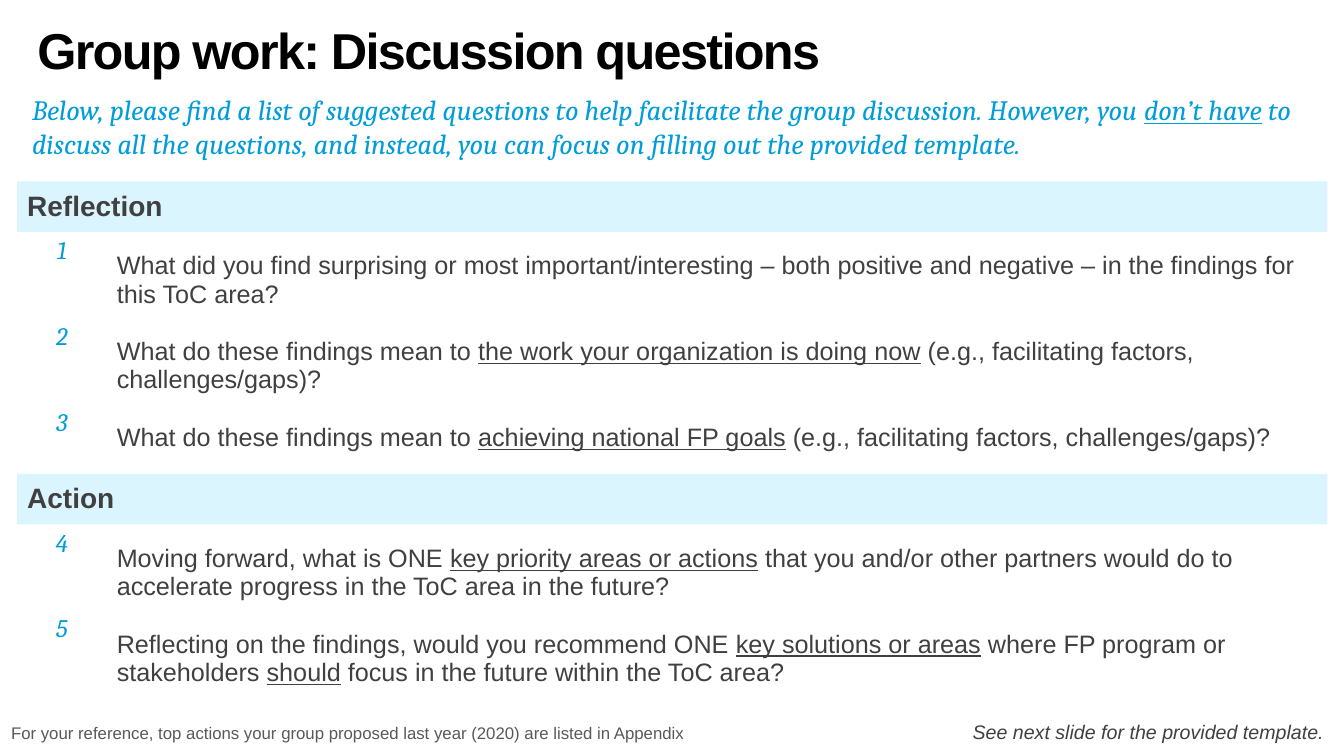
"""Build the group work slide with its table of discussion questions."""
from dataclasses import dataclass

from lxml import etree
from pptx import Presentation
from pptx.dml.color import RGBColor
from pptx.enum import text
from pptx.oxml import ns
from pptx.util import Cm, Pt


@dataclass(frozen=True)
class Theme:
    sans: str = "Arial"
    serif: str = "Cambria"
    black: str = "000000"
    ink: str = "404040"
    muted: str = "595959"
    accent: str = "009DD9"
    band: str = "C4EFFF"
    band_alpha: int = 60
    title: int = 36
    lead: int = 20
    body: int = 18
    note: int = 14
    small: int = 12
    table_style: str = "{2D5ABB26-0587-4C30-8999-92F81FD0307C}"


@dataclass(frozen=True)
class Style:
    size: int
    color: str
    font: str
    bold: bool = False
    italic: bool = False


@dataclass(frozen=True)
class Label:
    words: str
    left: float
    top: float
    width: float
    height: float
    style: Style


@dataclass(frozen=True)
class Section:
    heading: str
    row_heights: tuple[float, ...]
    questions: tuple[str, ...]


THEME = Theme()
TITLE = Style(THEME.title, THEME.black, THEME.sans, bold=True)
LEAD = Style(THEME.lead, THEME.accent, THEME.serif, italic=True)
HEADING = Style(THEME.lead, THEME.ink, THEME.sans, bold=True)
NUMBER = Style(THEME.body, THEME.accent, THEME.serif, italic=True)
QUESTION = Style(THEME.body, THEME.ink, THEME.sans)
REFERENCE = Style(THEME.small, THEME.muted, THEME.sans)
POINTER = Style(THEME.note, THEME.ink, THEME.sans, italic=True)

HEADING_HEIGHT = 1.27
HEADLINE = Label("Group work: Discussion questions", 0.69, 0.53, 32.51, 3.68, TITLE)
LABELS = (
    Label("Below, please find a list of suggested questions to help facilitate the group "
          "discussion. However, you _don’t have_ to discuss all the questions, and instead, "
          "you can focus on filling out the provided template.",
          0.56, 2.21, 32.77, 1.96, LEAD),
    Label("For your reference, top actions your group proposed last year (2020) are listed "
          "in Appendix", 0.03, 18.08, 18.06, 0.76, REFERENCE),
    Label("See next slide for the provided template.", 24.26, 18.01, 9.4, 0.86, POINTER),
)
SECTIONS = (
    Section("Reflection", (1.78, 1.78, 1.78), (
        "What did you find surprising or most important/interesting – both positive and "
        "negative – in the findings for this ToC area?",
        "What do these findings mean to _the work your organization is doing now_ (e.g., "
        "facilitating factors, challenges/gaps)?",
        "What do these findings mean to _achieving national FP goals_ (e.g., facilitating "
        "factors, challenges/gaps)?",
    )),
    Section("Action", (2.03, 2.03), (
        "Moving forward, what is ONE _key priority areas or actions_ that you and/or other "
        "partners would do to accelerate progress in the ToC area in the future?",
        "Reflecting on the findings, would you recommend ONE _key solutions or areas_ where "
        "FP program or stakeholders _should_ focus in the future within the ToC area?",
    )),
)


def write(tf, words: str, style: Style):
    """Write one paragraph, underlining the parts between underscores."""
    p = tf.paragraphs[0]
    p.font.size, p.font.name = Pt(style.size), style.font
    p.font.bold, p.font.italic = style.bold, style.italic
    p.font.color.rgb = RGBColor.from_string(style.color)
    for i, part in enumerate(words.split("_")):
        r = p.add_run()
        r.text = part
        if i % 2:
            r.font.underline = True
    return p


def add_label(s, label: Label):
    """Add a wrapping text box and return its text frame."""
    sp = s.shapes.add_textbox(Cm(label.left), Cm(label.top), Cm(label.width), Cm(label.height))
    tf = sp.text_frame
    tf.word_wrap = True
    write(tf, label.words, label.style)
    return tf


def add_headline(s, label: Label) -> None:
    """Add the title with tightened lines and letters."""
    p = add_label(s, label).paragraphs[0]
    p.line_spacing = 0.9
    p.runs[0].font.bold = True
    p.runs[0].font._element.set("spc", "-120")


def fill_heading(table, row: int, heading: str) -> None:
    """Merge a row into a tinted section heading."""
    cell = table.cell(row, 0)
    cell.merge(table.cell(row, 1))
    cell.vertical_anchor = text.MSO_ANCHOR.MIDDLE
    write(cell.text_frame, heading, HEADING)
    cell.fill.solid()
    cell.fill.fore_color.rgb = RGBColor.from_string(THEME.band)
    color = next(cell._tc.tcPr.iter(ns.qn("a:srgbClr")))
    etree.SubElement(color, ns.qn("a:alpha"), val=str(THEME.band_alpha * 1000))


def fill_question(table, row: int, number: int, question: str) -> None:
    """Write a centred number and its question."""
    left, right = table.cell(row, 0), table.cell(row, 1)
    write(left.text_frame, str(number), NUMBER).alignment = text.PP_ALIGN.CENTER
    right.margin_top = Cm(0.51)
    write(right.text_frame, question, QUESTION)
    for cell in (left, right):
        cell.fill.background()


def add_questions(s, sections: tuple[Section, ...]) -> None:
    """Add the table of numbered questions grouped by section."""
    count = sum(1 + len(section.questions) for section in sections)
    frame = s.shapes.add_table(count, 2, Cm(0.43), Cm(4.57), Cm(33.02), Cm(12.95))
    table = frame.table
    table.first_row = table.horz_banding = False
    next(frame.element.iter(ns.qn("a:tableStyleId"))).text = THEME.table_style
    table.columns[0].width, table.columns[1].width = Cm(2.26), Cm(30.76)
    row = number = 0
    for section in sections:
        table.rows[row].height = Cm(HEADING_HEIGHT)
        fill_heading(table, row, section.heading)
        row += 1
        for height, question in zip(section.row_heights, section.questions):
            number += 1
            table.rows[row].height = Cm(height)
            fill_question(table, row, number, question)
            row += 1
    frame.height = Cm(12.95)


def main() -> None:
    """Build and save the slide."""
    prs = Presentation()
    prs.slide_width, prs.slide_height = Cm(33.87), Cm(19.05)
    s = prs.slides.add_slide(prs.slide_layouts[6])
    add_headline(s, HEADLINE)
    for label in LABELS:
        add_label(s, label).auto_size = text.MSO_AUTO_SIZE.SHAPE_TO_FIT_TEXT
    add_questions(s, SECTIONS)
    prs.save("out.pptx")


if __name__ == "__main__":
    main()
